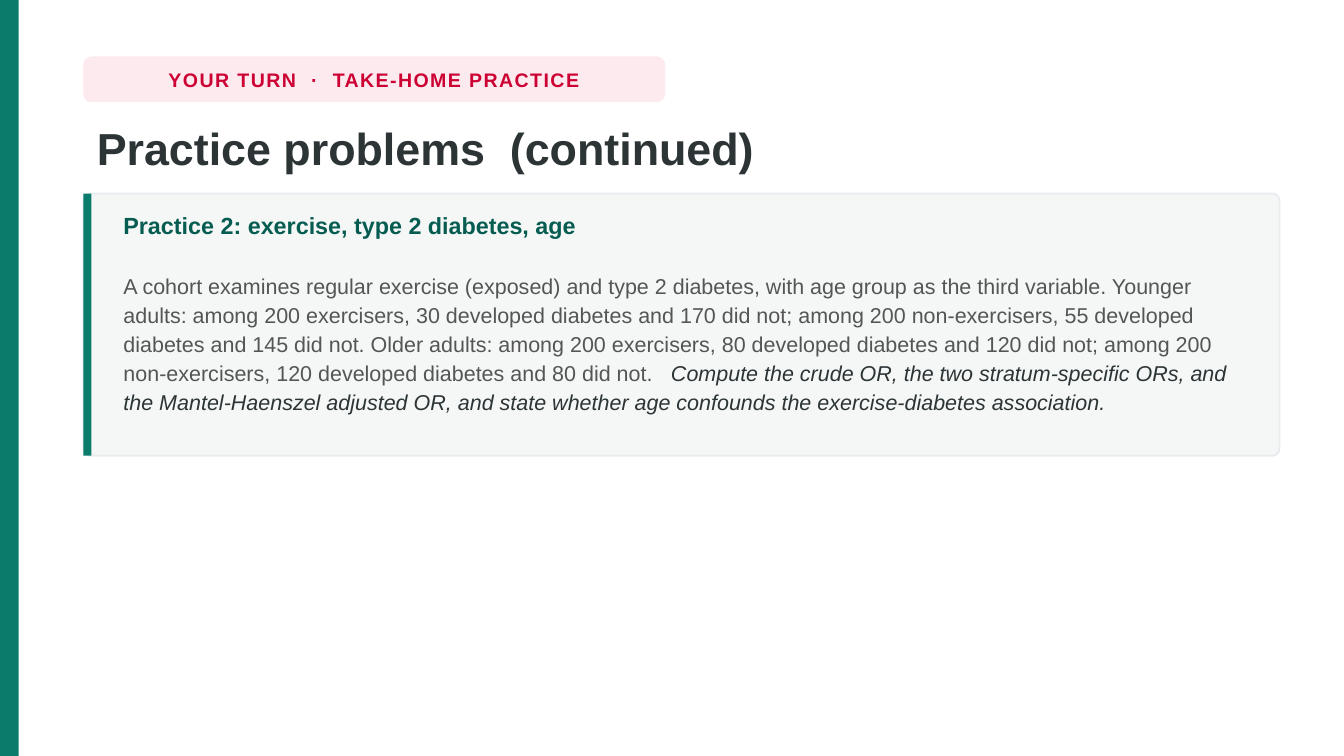
from pptx import Presentation
from pptx.dml.color import RGBColor
from pptx.enum.shapes import MSO_SHAPE
from pptx.enum.text import MSO_ANCHOR, MSO_AUTO_SIZE, PP_ALIGN
from pptx.util import Inches, Pt

TAG = "YOUR TURN  ·  TAKE-HOME PRACTICE"
TITLE = "Practice problems  (continued)"
PROBLEM_HEADING = "Practice 2: exercise, type 2 diabetes, age"
PROBLEM_PARTS = [
    ("A cohort examines regular exercise (exposed) and type 2 diabetes, with age group "
     "as the third variable. Younger adults: among 200 exercisers, 30 developed diabetes "
     "and 170 did not; among 200 non-exercisers, 55 developed diabetes and 145 did not. "
     "Older adults: among 200 exercisers, 80 developed diabetes and 120 did not; among 200 "
     "non-exercisers, 120 developed diabetes and 80 did not.   ", "body", False),
    ("Compute the crude OR, the two stratum-specific ORs, and the Mantel-Haenszel adjusted "
     "OR, and state whether age confounds the exercise-diabetes association.", "ink", True),
]

COLORS = {
    "green": "0B7B6B", "dark_green": "065C50", "red": "CC0033", "pink": "FDEAEF",
    "ink": "2D3436", "body": "555555", "card": "F4F7F6", "border": "E8ECEE",
}
WIDTH = 10
HEIGHT = WIDTH * 9 / 16
LEFT, CONTENT_WIDTH = 0.62, 8.9
CARD_TOP, CARD_HEIGHT = 1.44, 1.95
PAD_X, PAD_Y = 0.2, 0.08


def rgb(name):
    return RGBColor.from_string(COLORS[name])


def add_panel(slide, kind, box, fill, border=None, radius=0):
    """Add a filled shape, with rounded corners of the given radius in inches."""
    panel = slide.shapes.add_shape(kind, *map(Inches, box))
    panel.shadow.inherit = False
    panel.fill.solid()
    panel.fill.fore_color.rgb = rgb(fill)
    if border:
        panel.line.color.rgb = rgb(border)
        panel.line.width = Pt(1)
    else:
        panel.line.fill.background()
    if radius:
        panel.adjustments[0] = radius / min(box[2:])
    return panel


def style(paragraph, size, color, bold=False, spacing=None):
    """Set the font and line spacing of a paragraph."""
    font = paragraph.font
    font.name, font.size, font.bold = "Arial", Pt(size), bold
    font.color.rgb = rgb(color)
    if spacing:
        paragraph.line_spacing = spacing


def main():
    """Build the practice problem slide."""
    deck = Presentation()
    deck.slide_width, deck.slide_height = Inches(WIDTH), Inches(HEIGHT)
    slide = deck.slides.add_slide(deck.slide_layouts[5])

    add_panel(slide, MSO_SHAPE.RECTANGLE, (0, 0, 0.14, HEIGHT), "green")

    tag = add_panel(slide, MSO_SHAPE.ROUNDED_RECTANGLE, (LEFT, 0.42, 4.33, 0.34),
                    "pink", radius=0.06)
    tag.text_frame.word_wrap = False
    tag.text_frame.vertical_anchor = MSO_ANCHOR.MIDDLE
    tag_line = tag.text_frame.paragraphs[0]
    tag_line.alignment = PP_ALIGN.CENTER
    tag_run = tag_line.add_run()
    tag_run.text = TAG
    tag_run._r.get_or_add_rPr().set("spc", "80")
    style(tag_line, 10.5, "red", bold=True)

    title = slide.shapes.title
    title.left, title.top = Inches(LEFT), Inches(0.84)
    title.width, title.height = Inches(CONTENT_WIDTH), Inches(0.56)
    title.text_frame.text = TITLE
    title.text_frame.auto_size = MSO_AUTO_SIZE.NONE
    title.text_frame.vertical_anchor = MSO_ANCHOR.TOP
    title_line = title.text_frame.paragraphs[0]
    title_line.alignment = PP_ALIGN.LEFT
    style(title_line, 24, "ink", bold=True, spacing=1.02)

    add_panel(slide, MSO_SHAPE.ROUNDED_RECTANGLE,
              (LEFT, CARD_TOP, CONTENT_WIDTH, CARD_HEIGHT), "card", "border", radius=0.05)
    add_panel(slide, MSO_SHAPE.RECTANGLE, (LEFT, CARD_TOP, 0.06, CARD_HEIGHT), "green")

    problem = slide.shapes.add_textbox(
        Inches(LEFT + PAD_X), Inches(CARD_TOP + PAD_Y),
        Inches(8.48), Inches(CARD_HEIGHT - 2 * PAD_Y)).text_frame
    problem.word_wrap = True
    problem.margin_top = Inches(0.03)
    heading = problem.paragraphs[0]
    heading.text = PROBLEM_HEADING
    heading.space_after = Pt(16.5)
    style(heading, 12.5, "dark_green", bold=True, spacing=1.12)

    question = problem.add_paragraph()
    style(question, 11.5, "body", spacing=1.12)
    for text, color, italic in PROBLEM_PARTS:
        run = question.add_run()
        run.text = text
        run.font.color.rgb = rgb(color)
        run.font.italic = italic

    deck.save("out.pptx")


if __name__ == "__main__":
    main()
